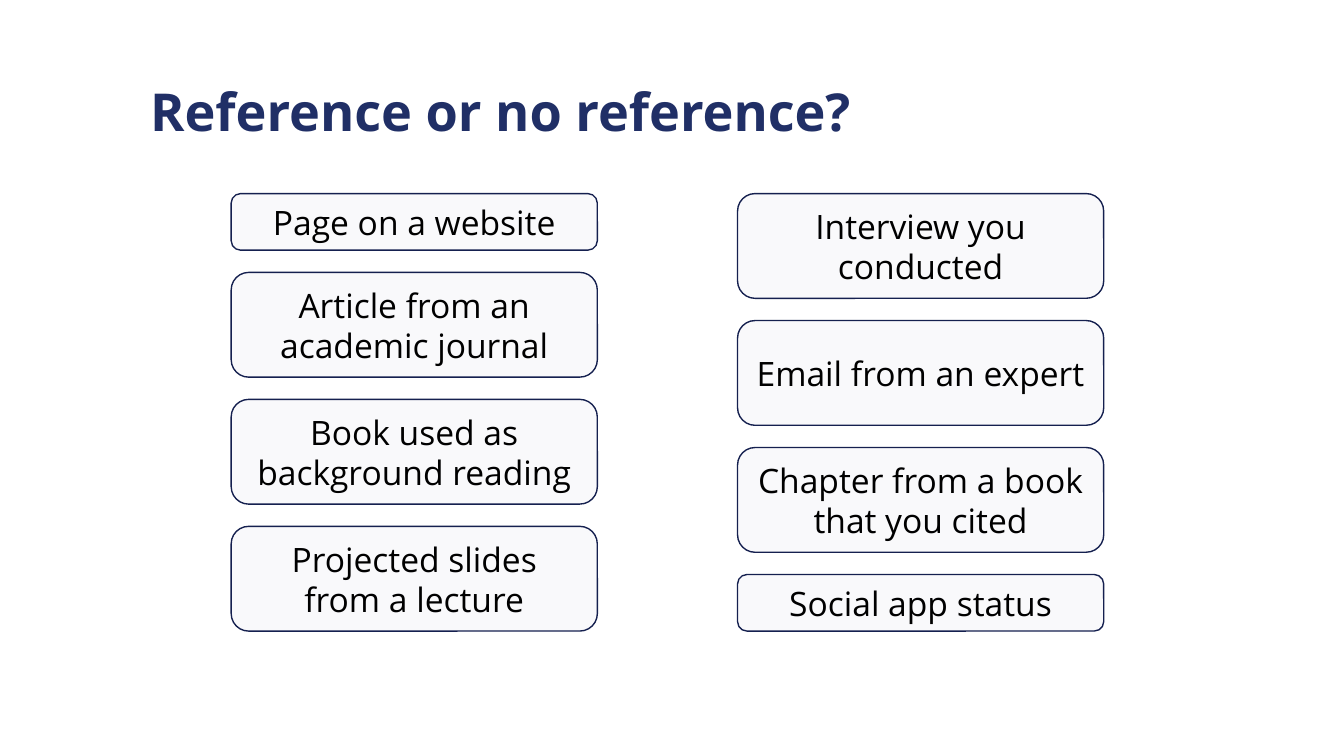
import pptx
import pptx.dml.color
import pptx.enum.shapes
import pptx.enum.text
import pptx.util

Cm = pptx.util.Cm
ALIGN = pptx.enum.text.PP_ALIGN
ANCHOR = pptx.enum.text.MSO_ANCHOR

# Content: each source type with the number of lines its card is tall
TITLE = "Reference or no reference?"
COLUMNS = [
    [("Page on a website", 1),
     ("Article from an academic journal", 2),
     ("Book used as background reading", 2),
     ("Projected slides from a lecture", 2)],
    [("Interview you conducted", 2),
     ("Email from an expert", 2),
     ("Chapter from a book that you cited", 2),
     ("Social app status", 1)],
]

# Layout in centimetres
COLUMN_LEFTS = (4.37, 13.94)
CARDS_TOP = 3.66
CARD_WIDTH = 6.92
CARD_HEIGHTS = {1: 1.07, 2: 1.98}
CARD_GAP = 0.42


def color(hex_value):
    return pptx.dml.color.RGBColor.from_string(hex_value)


def write(shape, text, size=18, ink="000000", bold=False,
          align=ALIGN.CENTER, anchor=ANCHOR.MIDDLE):
    frame = shape.text_frame
    frame.word_wrap = True
    frame.vertical_anchor = anchor
    frame.margin_left = frame.margin_right = Cm(0.25)
    frame.margin_top = frame.margin_bottom = Cm(0.25)
    paragraph = frame.paragraphs[0]
    paragraph.alignment = align
    run = paragraph.add_run()
    run.text = text
    run.font.name = "Open Sans"
    run.font.size = pptx.util.Pt(size)
    run.font.bold = bold
    run.font.color.rgb = color(ink)


def add_card(slide, text, left, top, height):
    card = slide.shapes.add_shape(
        pptx.enum.shapes.MSO_SHAPE.ROUNDED_RECTANGLE,
        Cm(left), Cm(top), Cm(CARD_WIDTH), Cm(height))
    card.shadow.inherit = False
    card.fill.solid()
    card.fill.fore_color.rgb = color("F9F9FB")
    card.line.color.rgb = color("15204F")
    card.line.width = pptx.util.Pt(0.75)
    write(card, text)


def main():
    deck = pptx.Presentation()
    deck.slide_width, deck.slide_height = Cm(25.4), Cm(14.29)
    slide = deck.slides.add_slide(deck.slide_layouts[6])

    # Title
    title = slide.shapes.add_textbox(Cm(2.59), Cm(1.24), Cm(20), Cm(1.6))
    write(title, TITLE, size=28, ink="202F66", bold=True,
          align=ALIGN.LEFT, anchor=ANCHOR.TOP)

    # Two columns of cards, stacked with equal gaps
    for left, cards in zip(COLUMN_LEFTS, COLUMNS):
        top = CARDS_TOP
        for text, lines in cards:
            height = CARD_HEIGHTS[lines]
            add_card(slide, text, left, top, height)
            top += height + CARD_GAP

    deck.save("out.pptx")


if __name__ == "__main__":
    main()
